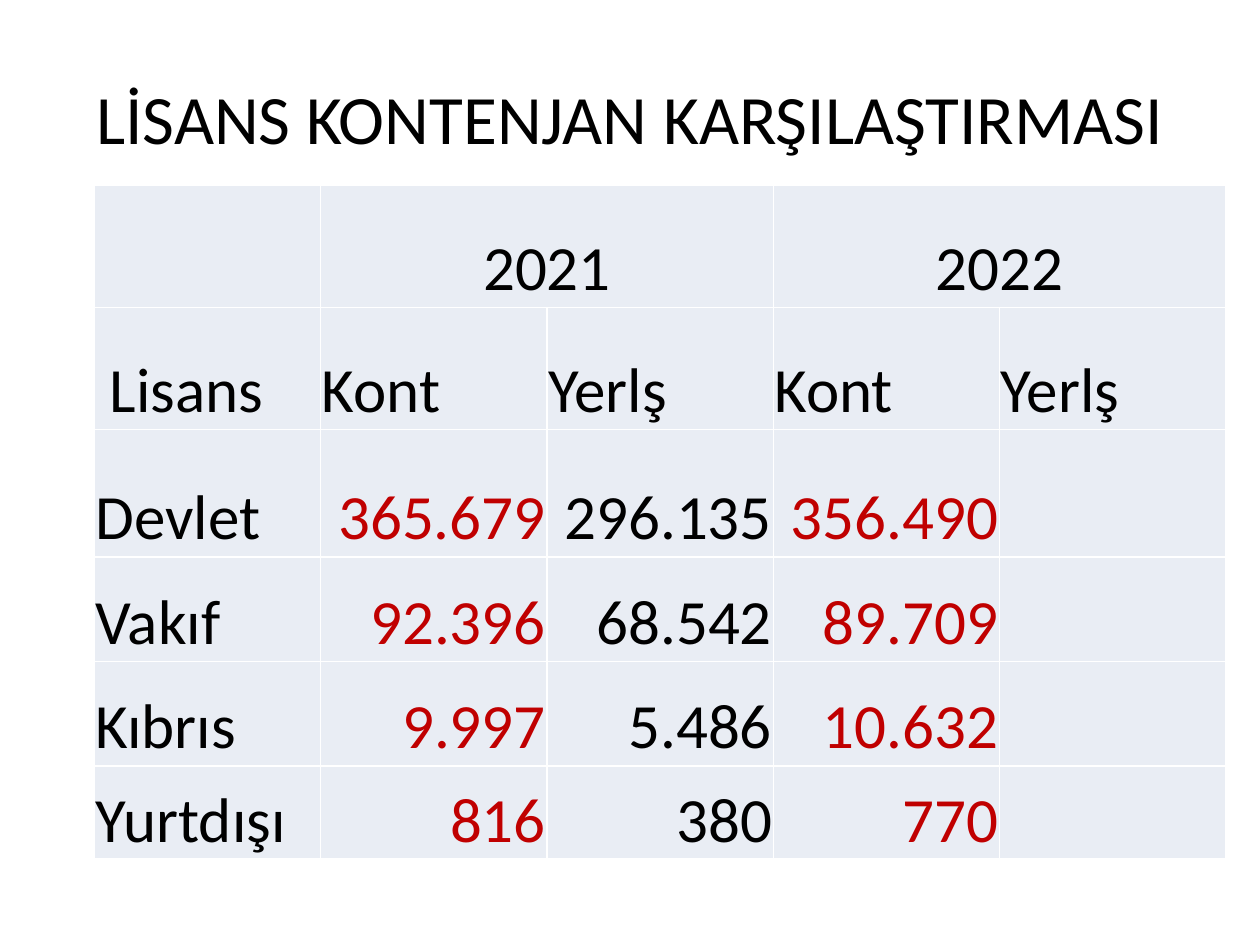
"""Build the slide comparing undergraduate quotas in 2021 and 2022."""
from lxml.etree import SubElement
from pptx import Presentation
from pptx.dml.color import RGBColor
from pptx.enum.text import MSO_ANCHOR, PP_ALIGN
from pptx.oxml.ns import qn
from pptx.util import Inches, Pt

TITLE = "LİSANS KONTENJAN KARŞILAŞTIRMASI"
ROWS = [
    ["", "2021", "", "2022", ""],
    [" Lisans", "Kont", "Yerlş", "Kont", "Yerlş"],
    ["Devlet", "365.679", "296.135", "356.490", ""],
    ["Vakıf", "92.396", "68.542", "89.709", ""],
    ["Kıbrıs", "9.997", "5.486", "10.632", ""],
    ["Yurtdışı", "816", "380", "770", ""],
]
ROW_HEIGHTS = [0.97, 0.97, 1.01, 0.83, 0.83, 0.74]
TABLE_LEFT, TABLE_TOP, TABLE_WIDTH = 0.75, 1.47, 8.98
YEAR_COLUMNS = QUOTA_COLUMNS = (1, 3)
BLACK, RED, PALE, WHITE = "000000", "C00000", "E9EDF4", "FFFFFF"


def color(value):
    return RGBColor.from_string(value)


def write(frame, text, size=36, fill=BLACK, align=PP_ALIGN.LEFT):
    para = frame.paragraphs[0]
    para.alignment = align
    span = para.add_run()
    span.text = text
    span.font.name = "Calibri"
    span.font.size = Pt(size)
    span.font.color.rgb = color(fill)


def add_borders(cell, fill):
    properties = cell._tc.get_or_add_tcPr()
    for side in ("lnL", "lnR", "lnT", "lnB"):
        line = SubElement(properties, qn(f"a:{side}"), w=str(Pt(1)))
        solid = SubElement(line, qn("a:solidFill"))
        SubElement(solid, qn("a:srgbClr"), val=fill)


def cell_format(row, column):
    if row == 0:
        return {"align": PP_ALIGN.CENTER}
    if row == 1 or column == 0:
        return {}
    return {"align": PP_ALIGN.RIGHT, "fill": RED if column in QUOTA_COLUMNS else BLACK}


def add_title(page):
    title = page.shapes.title
    title.left, title.top = Inches(0.5), Inches(0.3)
    title.width, title.height = Inches(9), Inches(1.25)
    title.text_frame.vertical_anchor = MSO_ANCHOR.MIDDLE
    write(title.text_frame, TITLE, size=39.6, align=PP_ALIGN.CENTER)


def add_quota_table(page):
    table = page.shapes.add_table(
        len(ROWS), len(ROWS[0]), Inches(TABLE_LEFT), Inches(TABLE_TOP),
        Inches(TABLE_WIDTH), Inches(sum(ROW_HEIGHTS))).table
    table.first_row = table.horz_banding = False
    for row, height in zip(table.rows, ROW_HEIGHTS):
        row.height = Inches(height)
    for column in YEAR_COLUMNS:
        table.cell(0, column).merge(table.cell(0, column + 1))
    for row, texts in enumerate(ROWS):
        for column, text in enumerate(texts):
            cell = table.cell(row, column)
            add_borders(cell, WHITE)
            cell.fill.solid()
            cell.fill.fore_color.rgb = color(PALE)
            cell.vertical_anchor = MSO_ANCHOR.BOTTOM
            cell.margin_left = cell.margin_right = cell.margin_top = Inches(0.01)
            cell.margin_bottom = 0
            if text:
                write(cell.text_frame, text, **cell_format(row, column))


def main():
    deck = Presentation()
    deck.slide_width, deck.slide_height = Inches(10), Inches(7.5)
    page = deck.slides.add_slide(deck.slide_layouts[5])
    add_title(page)
    add_quota_table(page)
    deck.save("out.pptx")


if __name__ == "__main__":
    main()
